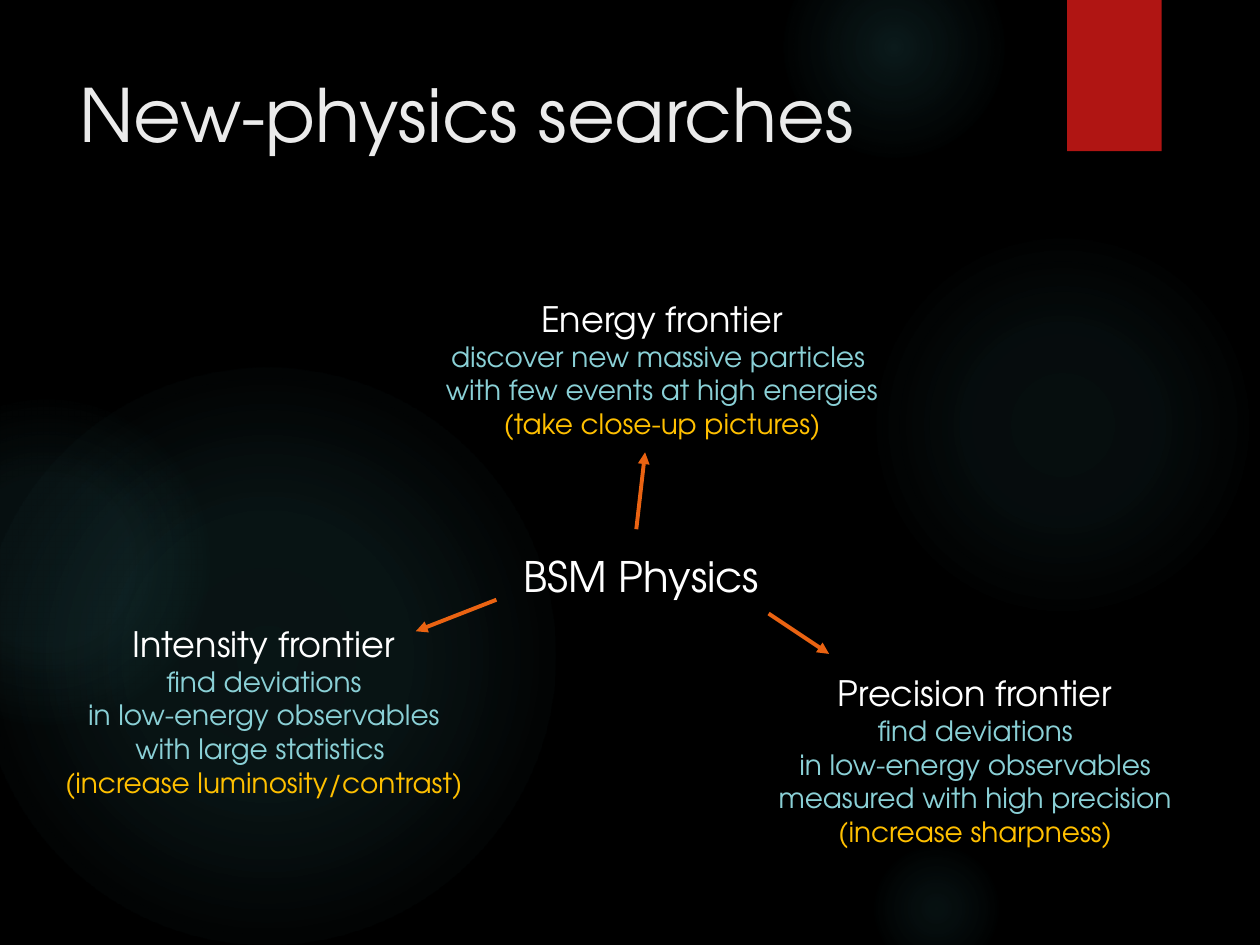
from typing import NamedTuple

import lxml.etree
import pptx
import pptx.dml.color
import pptx.enum.shapes
import pptx.enum.text
import pptx.oxml.ns
import pptx.util

SLIDE_WIDTH, SLIDE_HEIGHT = pptx.util.Inches(10), pptx.util.Inches(7.5)
COLUMNS, ROWS = 100, 75
FONT = "TeX Gyre Adventor"
BLACK, WHITE, PALE, RED = "000000", "FFFFFF", "EBEBEB", "B01513"
TEAL, AQUA, GOLD, ORANGE = "50B9C1", "8AD0D6", "FFC000", "EA6312"


class Area(NamedTuple):
    column: float
    row: float
    columns: float
    rows: float


class Glow(NamedTuple):
    column: float
    row: float
    diameter: float
    centre_alpha: int
    middle_alpha: int
    fade_end: int


class Frontier(NamedTuple):
    area: Area
    name: str
    aims: tuple[str, ...]
    analogy: str


class Arrow(NamedTuple):
    start: tuple[float, float]
    end: tuple[float, float]


class Line(NamedTuple):
    text: str
    size: float
    colour: str


GLOWS = (
    Glow(68.9, 18.3, 30.8, 7, 6, 69),
    Glow(62.2, -5, 17.5, 14, 7, 73),
    Glow(68.9, 66.7, 10.8, 9, 5, 66),
    Glow(-1.7, 29.2, 45.8, 11, 10, 75),
    Glow(-9.2, 31.7, 25.8, 8, 8, 72),
)
FRONTIERS = (
    Frontier(
        Area(34.1, 23.1, 36.9, 12.8),
        "Energy frontier",
        ("discover new massive particles ", "with few events at high energies"),
        "(take close-up pictures)",
    ),
    Frontier(
        Area(4, 48.9, 33.9, 15.1),
        "Intensity frontier",
        ("find deviations", "in low-energy observables", "with large statistics "),
        "(increase luminosity/contrast)",
    ),
    Frontier(
        Area(60.5, 52.8, 33.8, 15.1),
        "Precision frontier",
        ("find deviations", "in low-energy observables", "measured with high precision"),
        "(increase sharpness)",
    ),
)
ARROWS = (
    Arrow((50.5, 42), (51.2, 35.9)),
    Arrow((39.4, 47.6), (33, 50.1)),
    Arrow((61, 48.7), (65.8, 51.9)),
)


def across(columns: float) -> int:
    return round(SLIDE_WIDTH * columns / COLUMNS)


def down(rows: float) -> int:
    return round(SLIDE_HEIGHT * rows / ROWS)


def bounds(area: Area) -> tuple[int, int, int, int]:
    return across(area.column), down(area.row), across(area.columns), down(area.rows)


def rgb(colour: str) -> pptx.dml.color.RGBColor:
    return pptx.dml.color.RGBColor.from_string(colour)


def add_child(parent, tag: str, **attributes):
    values = {key: str(value) for key, value in attributes.items()}
    return lxml.etree.SubElement(parent, pptx.oxml.ns.qn(tag), values)


def add_plain_shape(slide, kind, area: Area, colour: str):
    shape = slide.shapes.add_shape(kind, *bounds(area))
    shape.shadow.inherit = False
    shape.fill.solid()
    shape.fill.fore_color.rgb = rgb(colour)
    shape.line.fill.background()
    return shape


def add_glow(slide, glow: Glow) -> None:
    area = Area(glow.column, glow.row, glow.diameter, glow.diameter)
    disc = add_plain_shape(slide, pptx.enum.shapes.MSO_SHAPE.OVAL, area, TEAL)
    properties = disc._element.spPr
    gradient = add_child(properties, "a:gradFill", rotWithShape=1)
    stops = add_child(gradient, "a:gsLst")
    for position, alpha in ((0, glow.centre_alpha), (36, glow.middle_alpha), (glow.fade_end, 0)):
        stop = add_child(stops, "a:gs", pos=position * 1000)
        tint = add_child(stop, "a:srgbClr", val=TEAL)
        add_child(tint, "a:alpha", val=alpha * 1000)
    radial = add_child(gradient, "a:path", path="circle")
    add_child(radial, "a:fillToRect", l=50000, t=50000, r=50000, b=50000)
    properties.replace(properties.find(pptx.oxml.ns.qn("a:solidFill")), gradient)


def write_line(paragraph, line: Line) -> None:
    run = paragraph.add_run()
    run.text = line.text
    run.font.name = FONT
    run.font.size = pptx.util.Pt(line.size)
    run.font.color.rgb = rgb(line.colour)


def add_label(slide, area: Area, lines: list[Line]) -> None:
    frame = slide.shapes.add_textbox(*bounds(area)).text_frame
    frame.word_wrap = False
    frame.auto_size = pptx.enum.text.MSO_AUTO_SIZE.SHAPE_TO_FIT_TEXT
    for index, line in enumerate(lines):
        paragraph = frame.add_paragraph() if index else frame.paragraphs[0]
        paragraph.alignment = pptx.enum.text.PP_ALIGN.CENTER
        write_line(paragraph, line)


def add_frontier(slide, frontier: Frontier) -> None:
    aims = [Line(aim, 16, AQUA) for aim in frontier.aims]
    lines = [Line(frontier.name, 20, WHITE), *aims, Line(frontier.analogy, 16, GOLD)]
    add_label(slide, frontier.area, lines)


def add_arrow(slide, arrow: Arrow) -> None:
    connector = slide.shapes.add_connector(
        pptx.enum.shapes.MSO_CONNECTOR.STRAIGHT,
        across(arrow.start[0]), down(arrow.start[1]),
        across(arrow.end[0]), down(arrow.end[1]),
    )
    connector.line.color.rgb = rgb(ORANGE)
    connector.line.width = pptx.util.Pt(2.25)
    add_child(connector.line._get_or_add_ln(), "a:tailEnd", type="triangle")
    add_child(connector._element.spPr, "a:effectLst")


def write_title(slide, area: Area, line: Line) -> None:
    title = slide.shapes.title
    title.left, title.top, title.width, title.height = bounds(area)
    frame = title.text_frame
    frame.word_wrap = True
    frame.auto_size = pptx.enum.text.MSO_AUTO_SIZE.NONE
    frame.vertical_anchor = pptx.enum.text.MSO_ANCHOR.TOP
    frame.paragraphs[0].alignment = pptx.enum.text.PP_ALIGN.LEFT
    write_line(frame.paragraphs[0], line)


def main() -> None:
    deck = pptx.Presentation()
    deck.slide_width, deck.slide_height = SLIDE_WIDTH, SLIDE_HEIGHT
    slide = deck.slides.add_slide(deck.slide_layouts[5])
    slide.background.fill.solid()
    slide.background.fill.fore_color.rgb = rgb(BLACK)
    write_title(slide, Area(5.3, 5, 77.2, 15.3), Line("New-physics searches", 42, PALE))
    for glow in GLOWS:
        add_glow(slide, glow)
    add_plain_shape(slide, pptx.enum.shapes.MSO_SHAPE.RECTANGLE, Area(84.7, 0, 7.5, 12), RED)
    for frontier in FRONTIERS:
        add_frontier(slide, frontier)
    add_label(slide, Area(40.4, 43.2, 21, 5), [Line("BSM Physics", 24, WHITE)])
    for arrow in ARROWS:
        add_arrow(slide, arrow)
    deck.save("out.pptx")


if __name__ == "__main__":
    main()
